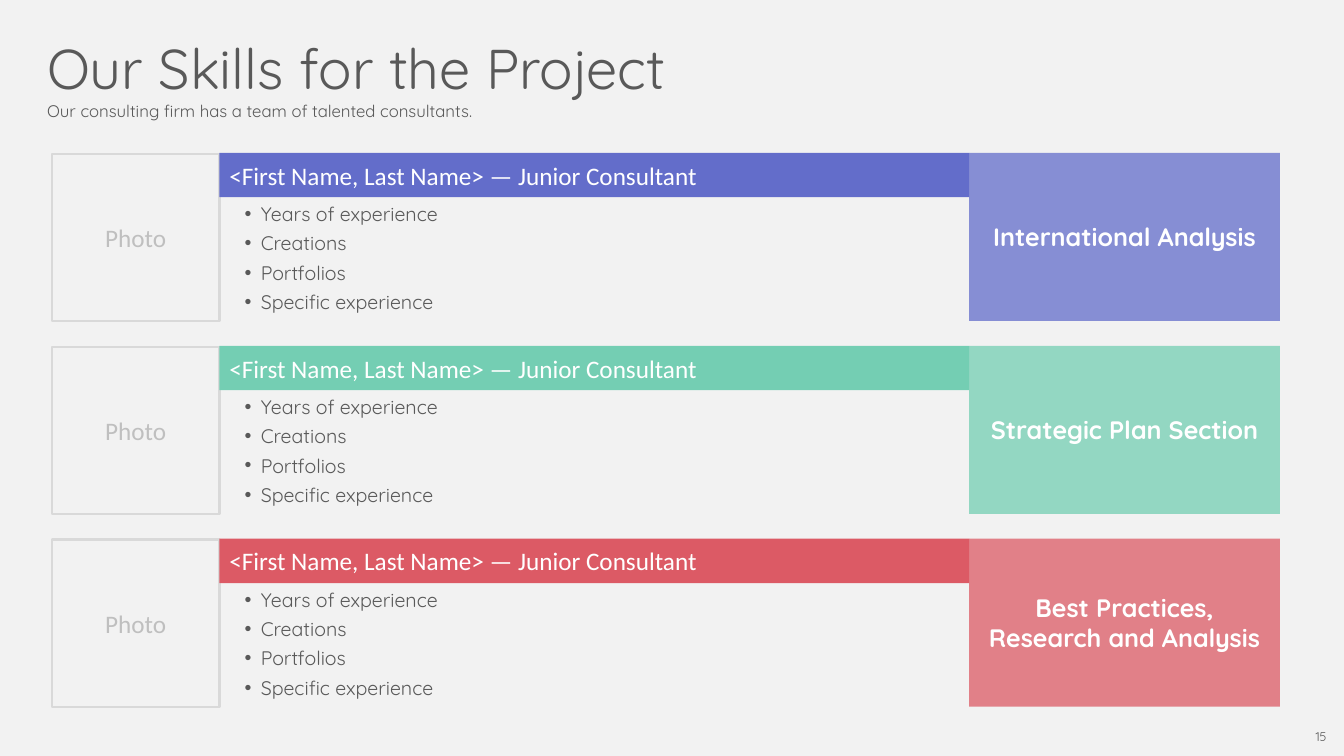
from lxml.etree import SubElement
from pptx import Presentation
from pptx.dml.color import RGBColor
from pptx.enum.shapes import MSO_SHAPE
from pptx.enum.text import MSO_ANCHOR, PP_ALIGN
from pptx.oxml.ns import qn
from pptx.util import Pt

BACKGROUND = RGBColor(0xF2, 0xF2, 0xF2)
GREY = RGBColor(0x59, 0x59, 0x59)
FRAME_GREY = RGBColor(0xD9, 0xD9, 0xD9)
LABEL_GREY = RGBColor(0xBF, 0xBF, 0xBF)
WHITE = RGBColor(0xFF, 0xFF, 0xFF)
BLUE = RGBColor(0x63, 0x6D, 0xCA)
GREEN = RGBColor(0x74, 0xCE, 0xB3)
RED = RGBColor(0xDC, 0x5A, 0x65)

CONSULTANT = "<First Name, Last Name> — Junior Consultant"
QUALIFICATIONS = ["Years of experience", "Creations", "Portfolios", "Specific experience"]
SKILLS = [
    ("International Analysis", BLUE),
    ("Strategic Plan Section", GREEN),
    ("Best Practices, Research and Analysis", RED),
]
FIRST_ROW_TOP = 109.2
ROW_PITCH = 137.8
ROW_HEIGHT = 120
BANNER_LEFT = 156.7
BANNER_WIDTH = 535.6
BANNER_HEIGHT = 31.7


def style_paragraph(paragraph, size, color, font="Quicksand", bold=False, align=PP_ALIGN.LEFT):
    """Format a paragraph and its runs."""
    paragraph.alignment = align
    for run in paragraph.runs:
        run.font.name = font
        run.font.size = Pt(size)
        run.font.bold = bold
        run.font.color.rgb = color


def add_text(slide, left, top, width, height, lines):
    """Add a wrapping text box with one paragraph per line and return its paragraphs."""
    frame = slide.shapes.add_textbox(Pt(left), Pt(top), Pt(width), Pt(height)).text_frame
    frame.word_wrap = True
    frame.text = "\n".join(lines)
    return frame.paragraphs


def add_box(slide, kind, left, top, width, height, text, fill=None):
    """Add a flat shape with vertically centred text."""
    box = slide.shapes.add_shape(kind, Pt(left), Pt(top), Pt(width), Pt(height))
    box.shadow.inherit = False
    box.line.fill.background()
    if fill is None:
        box.fill.background()
    else:
        box.fill.solid()
        box.fill.fore_color.rgb = fill
    box.text_frame.text = text
    box.text_frame.word_wrap = True
    box.text_frame.vertical_anchor = MSO_ANCHOR.MIDDLE
    return box


def add_photo_frame(slide, top):
    """Add the outlined place for a consultant's photo."""
    photo = add_box(slide, MSO_SHAPE.RECTANGLE, 37.1, top, 119.6, 119.6, "Photo")
    photo.line.color.rgb = FRAME_GREY
    photo.line.width = Pt(1.75)
    style_paragraph(photo.text_frame.paragraphs[0], 18, LABEL_GREY, "Calibri", align=PP_ALIGN.CENTER)


def add_banner(slide, top, color):
    """Add the coloured bar with the consultant's name."""
    banner = add_box(slide, MSO_SHAPE.RECTANGLE, BANNER_LEFT, top, BANNER_WIDTH, BANNER_HEIGHT,
                     CONSULTANT, color)
    style_paragraph(banner.text_frame.paragraphs[0], 18, WHITE, "Calibri")


def add_qualifications(slide, top):
    """Add the bulleted list below a banner."""
    for item in add_text(slide, BANNER_LEFT, top, 414.7, 87.1, QUALIFICATIONS):
        style_paragraph(item, 14, GREY)
        item.space_before = Pt(4)
        properties = item._p.get_or_add_pPr()
        properties.set("marL", str(Pt(22.5)))
        properties.set("indent", str(Pt(-11.5)))
        SubElement(properties, qn("a:buFont"), typeface="Arial")
        SubElement(properties, qn("a:buChar"), char="•")


def add_skill(slide, top, skill, color):
    """Add the translucent block naming the skill."""
    block = add_box(slide, MSO_SHAPE.ROUNDED_RECTANGLE, BANNER_LEFT + BANNER_WIDTH, top,
                    221.8, ROW_HEIGHT, skill, color)
    block.adjustments[0] = 0
    solid_color = block.fill._xPr.find(qn("a:solidFill"))[0]
    SubElement(solid_color, qn("a:alpha"), val="75000")
    style_paragraph(block.text_frame.paragraphs[0], 18, WHITE, bold=True, align=PP_ALIGN.CENTER)


def main():
    """Build and save the skills slide."""
    deck = Presentation()
    deck.slide_width, deck.slide_height = Pt(960), Pt(540)
    slide = deck.slides.add_slide(deck.slide_layouts[6])
    slide.background.fill.solid()
    slide.background.fill.fore_color.rgb = BACKGROUND

    title, subtitle = add_text(slide, 26.6, 20.2, 593.3, 70.6, [
        "Our Skills for the Project",
        "Our consulting firm has a team of talented consultants.",
    ])
    style_paragraph(title, 40, GREY)
    style_paragraph(subtitle, 12, GREY)

    for row, (skill, color) in enumerate(SKILLS):
        top = FIRST_ROW_TOP + row * ROW_PITCH
        add_photo_frame(slide, top + 0.7)
        add_banner(slide, top, color)
        add_qualifications(slide, top + BANNER_HEIGHT)
        add_skill(slide, top, skill, color)

    page_number = add_text(slide, 928, 517, 26.7, 18, ["15"])[0]
    style_paragraph(page_number, 9, GREY, align=PP_ALIGN.RIGHT)
    deck.save("out.pptx")


if __name__ == "__main__":
    main()
